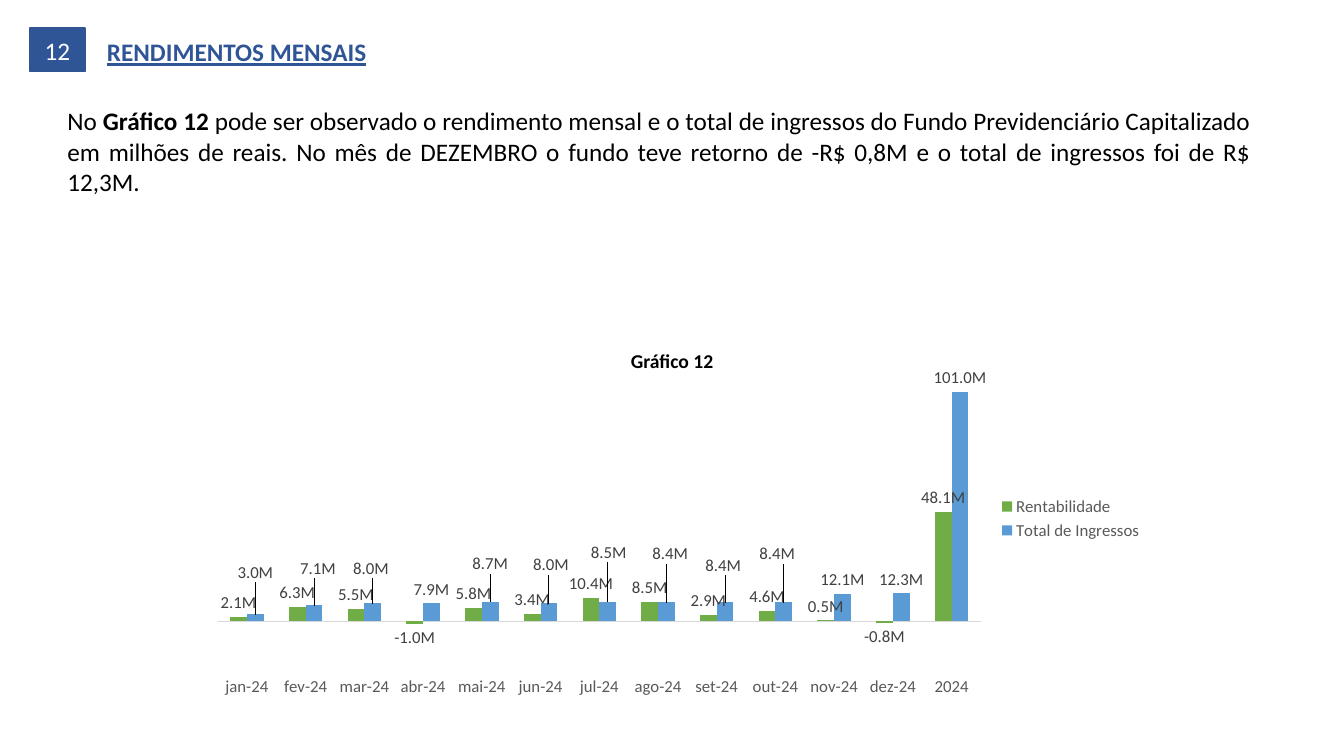
from dataclasses import dataclass

from lxml import etree
from pptx import Presentation
from pptx.chart.data import CategoryChartData
from pptx.dml.color import RGBColor
from pptx.enum import chart as ch, shapes, text
from pptx.oxml.ns import qn
from pptx.util import Cm, Pt


@dataclass(frozen=True)
class Theme:
    """Hold the colours and type sizes."""
    face: str = "Calibri"
    navy: str = "2F5597"
    edge: str = "325491"
    white: str = "FFFFFF"
    black: str = "000000"
    axis: str = "595959"
    line: str = "D9D9D9"
    label: str = "404040"
    green: str = "70AD47"
    blue: str = "5B9BD5"
    body: int = 18
    head: int = 14
    small: int = 12


T = Theme()
FORM = '0.0,,"M"'
C15 = "http://schemas.microsoft.com/office/drawing/2012/chart"
MONTHS = "jan fev mar abr mai jun jul ago set out nov dez".split()
YIELD = [2.1, 6.3, 5.5, -1, 5.8, 3.4, 10.4, 8.5, 2.9, 4.6, 0.5, -0.8, 48.1]
INCOME = [3, 7.1, 8, 7.9, 8.7, 8, 8.5, 8.4, 8.4, 8.4, 12.1, 12.3, 101]
SHIFTS = {0: (0, -0.075), 1: (0.004, -0.06), 2: (-0.002, -0.055),
          4: (0, -0.063), 5: (0.002, -0.065), 6: (0.001, -0.095),
          7: (0.004, -0.092), 8: (-0.002, -0.06), 9: (-0.007, -0.092)}


def apply(item, form):
    """Set each attribute named in a dict of format values."""
    for name, value in form.items():
        setattr(item, name, value)


def style(font, size, color, **more):
    """Format a font."""
    apply(font, {"name": T.face, "size": Pt(size), **more})
    font.color.rgb = RGBColor.from_string(color)


def paint(fill, color):
    """Give a solid fill."""
    fill.solid()
    fill.fore_color.rgb = RGBColor.from_string(color)


def write(shape, runs, size, color, align, anchor=text.MSO_ANCHOR.TOP):
    """Write one paragraph of (words, format) runs."""
    frame = shape.text_frame
    apply(frame, {"word_wrap": True, "vertical_anchor": anchor,
                  "auto_size": text.MSO_AUTO_SIZE.NONE})
    para = frame.paragraphs[0]
    para.alignment = align
    for words, form in runs:
        run = para.add_run()
        run.text = words
        style(run.font, size, color, **form)


def badge(slide, words, box):
    """Draw the filled number square."""
    shape = slide.shapes.add_shape(shapes.MSO_SHAPE.RECTANGLE, *box)
    shape.shadow.inherit = False
    paint(shape.fill, T.navy)
    paint(shape.line.fill, T.edge)
    shape.line.width = Pt(1)
    write(shape, [(words, {})], T.body, T.white,
          text.PP_ALIGN.CENTER, text.MSO_ANCHOR.MIDDLE)


def title(slide, words, box):
    """Place and format the title."""
    shape = slide.shapes.title
    apply(shape, dict(zip(("left", "top", "width", "height"), box)))
    write(shape, [(words, {"bold": True, "underline": True})],
          T.body, T.navy, text.PP_ALIGN.LEFT)


def note(slide, runs, size, align, box):
    """Add a text box."""
    write(slide.shapes.add_textbox(*box), runs, size, T.black, align)


def layout(**values):
    """Build a manual chart layout."""
    root = etree.Element(qn("c:layout"))
    manual = etree.SubElement(root, qn("c:manualLayout"))
    for tag, value in values.items():
        etree.SubElement(manual, qn("c:" + tag)).set("val", str(value))
    return root


def unlead(root):
    """Turn off the leader lines of a label group."""
    for old in root.findall(qn("c:showLeaderLines")):
        root.remove(old)
    group = etree.SubElement(root, qn("c:extLst"))
    ext = etree.SubElement(group, qn("c:ext"), nsmap={"c15": C15},
                           uri="{CE6537A1-D6FC-4f65-9D91-7224C49458BB}")
    etree.SubElement(ext, f"{{{C15}}}showLeaderLines", val="0")


def shift(series, moves):
    """Move single value labels by fractions of the chart size."""
    for index in moves:
        label = series.points[index].data_label
        style(label.font, T.small, T.label)
        label.position = ch.XL_LABEL_POSITION.OUTSIDE_END
    for node in series.data_labels._element.findall(qn("c:dLbl")):
        mark = node.find(qn("c:idx"))
        x, y = moves[int(mark.get("val"))]
        form = etree.Element(qn("c:numFmt"), formatCode=FORM, sourceLinked="0")
        mark.addnext(form)
        mark.addnext(layout(x=x, y=y))


def bars(slide, box):
    """Add the column chart."""
    data = CategoryChartData()
    data.categories = [f"{month}-24" for month in MONTHS] + ["2024"]
    for name, values in (("Rentabilidade", YIELD),
                         ("Total de Ingressos", INCOME)):
        data.add_series(name, [round(value * 1e6) for value in values])
    chart = slide.shapes.add_chart(
        ch.XL_CHART_TYPE.COLUMN_CLUSTERED, *box, data).chart
    apply(chart, {"has_title": False, "has_legend": True})
    style(chart.font, T.small, T.black)
    apply(chart.legend, {"position": ch.XL_LEGEND_POSITION.RIGHT,
                         "include_in_layout": False})
    style(chart.legend.font, T.small, T.axis)

    apply(chart.value_axis, {"visible": False, "has_major_gridlines": False,
                             "minimum_scale": -20e6, "maximum_scale": 120e6})
    axis = chart.category_axis
    apply(axis, {"major_tick_mark": ch.XL_TICK_MARK.NONE,
                 "tick_label_position": ch.XL_TICK_LABEL_POSITION.LOW})
    style(axis.tick_labels.font, T.small, T.axis)
    paint(axis.format.line.fill, T.line)
    axis.format.line.width = Pt(0.75)

    plot = chart.plots[0]
    apply(plot, {"gap_width": 150, "overlap": 0, "vary_by_categories": False})
    for series, color in zip(plot.series, (T.green, T.blue)):
        series.invert_if_negative = False
        paint(series.format.fill, color)
        labels = series.data_labels
        apply(labels, {"show_value": True, "number_format": FORM,
                       "number_format_is_linked": False,
                       "position": ch.XL_LABEL_POSITION.OUTSIDE_END})
        style(labels.font, T.small, T.label)
        unlead(labels._element)
    shift(plot.series[1], SHIFTS)

    area = chart._chartSpace.find(".//" + qn("c:plotArea"))
    for old in area.findall(qn("c:layout")):
        area.remove(old)
    area.insert(0, layout(layoutTarget="inner", xMode="edge", yMode="edge",
                          x=0.027, y=0.044, w=0.794, h=0.855))


def main():
    """Build and save the slide."""
    deck = Presentation()
    apply(deck, {"slide_width": Cm(33.87), "slide_height": Cm(19.05)})
    slide = deck.slides.add_slide(deck.slide_layouts.get_by_name("Title Only"))
    badge(slide, "12", (Cm(0.76), Cm(0.71), Cm(1.38), Cm(1.1)))
    title(slide, "RENDIMENTOS MENSAIS",
          (Cm(2.44), Cm(0.79), Cm(11.23), Cm(1.02)))
    note(slide, [("Gráfico 12", {"bold": True})], T.head,
         text.PP_ALIGN.CENTER, (Cm(14.3), Cm(8.66), Cm(5.28), Cm(0.86)))
    note(slide, [
        ("No ", {}),
        ("Gráfico 12 ", {"bold": True}),
        ("pode ser observado o rendimento mensal e o total de ingressos do "
         "Fundo Previdenciário Capitalizado em milhões de reais. No mês de "
         "DEZEMBRO o fundo teve retorno de -R$ 0,8M e o total de ingressos "
         "foi de R$ 12,3M.", {}),
    ], T.body, text.PP_ALIGN.JUSTIFY,
        (Cm(1.45), Cm(2.54), Cm(30.33), Cm(2.57)))
    bars(slide, (Cm(4.83), Cm(8.38), Cm(24.23), Cm(9.37)))
    deck.save("out.pptx")


if __name__ == "__main__":
    main()
